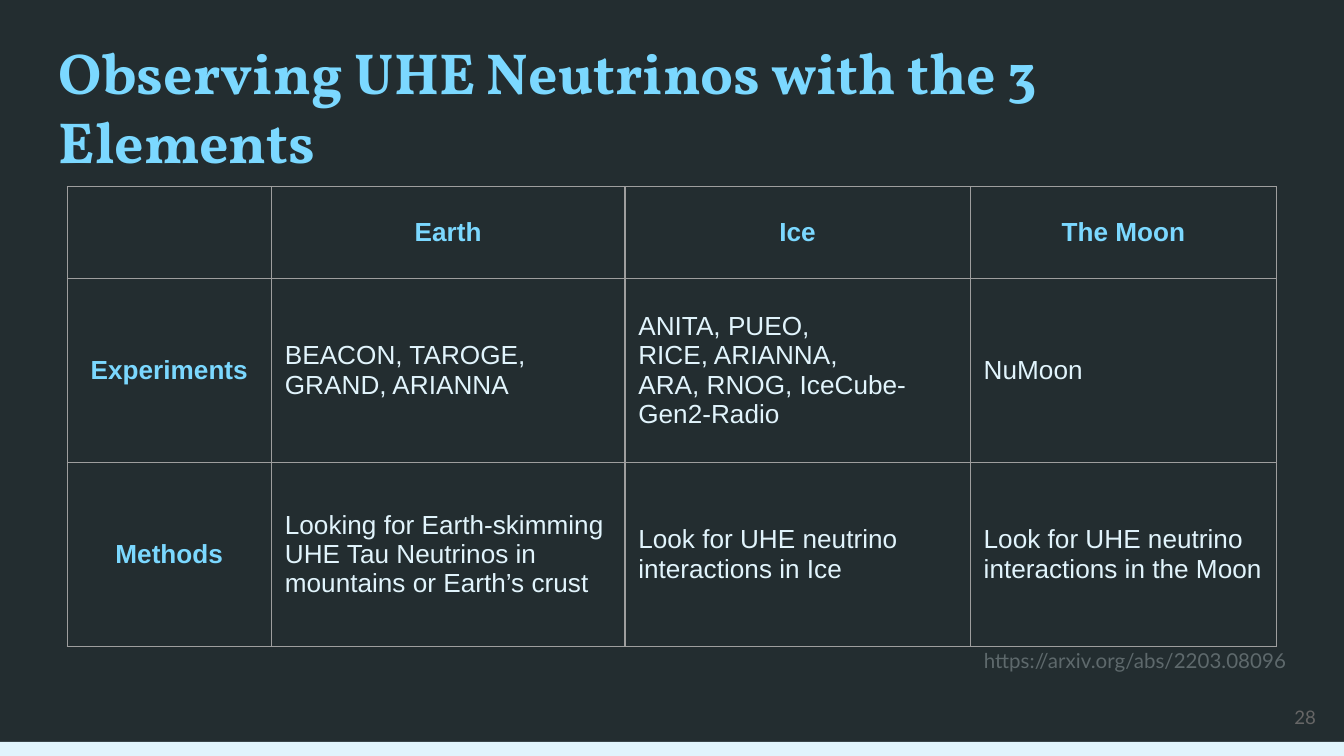
from dataclasses import dataclass

from lxml.etree import SubElement
from pptx import Presentation
from pptx.dml.color import RGBColor
from pptx.enum.shapes import MSO_SHAPE
from pptx.enum.text import MSO_ANCHOR, PP_ALIGN
from pptx.oxml.ns import qn
from pptx.util import Inches, Pt

# A 16:9 slide; boxes are placed in hundredths of an inch
WIDTH = 10
HEIGHT = WIDTH * 9 / 16


@dataclass(frozen=True)
class Theme:
    background: str = "232D30"
    accent: str = "7BD8FF"
    body: str = "E1F4FC"
    source: str = "5E696C"
    number: str = "666666"
    border: str = "9E9E9E"
    border_width: float = 0.75
    inset: float = 0.1
    title_size: int = 31
    table_size: int = 14
    source_size: int = 11
    number_size: int = 10
    title_font: str = "Vollkorn"
    table_font: str = "Arial"
    small_font: str = "Lato"


THEME = Theme()

COLUMNS = (1.52, 2.63, 2.57, 2.28)
ROWS = (0.68, 1.37, 1.37)
CONTENT = (
    ("", "Earth", "Ice", "The Moon"),
    ("Experiments", "BEACON, TAROGE, GRAND, ARIANNA",
     "ANITA, PUEO,\nRICE, ARIANNA,\nARA, RNOG, IceCube-Gen2-Radio", "NuMoon"),
    ("Methods",
     "Looking for Earth-skimming UHE Tau Neutrinos in mountains or Earth’s crust",
     "Look for UHE neutrino interactions in Ice",
     "Look for UHE neutrino interactions in the Moon"),
)


def inch_box(*sides):
    """Turn left, top, width and height into lengths."""
    return tuple(Inches(side) for side in sides)


def set_insets(holder):
    """Give a text frame or a table cell the same margin on every side."""
    holder.margin_left = holder.margin_right = Inches(THEME.inset)
    holder.margin_top = holder.margin_bottom = Inches(THEME.inset)


def write_text(frame, text, *, size, font, color, bold=False, align=PP_ALIGN.LEFT):
    """Write one paragraph for each line of text."""
    for index, line in enumerate(text.split("\n")):
        paragraph = frame.add_paragraph() if index else frame.paragraphs[0]
        paragraph.alignment = align
        if not line:
            continue
        run = paragraph.add_run()
        run.text = line
        run.font.size = Pt(size)
        run.font.name = font
        run.font.bold = bold
        run.font.color.rgb = RGBColor.from_string(color)


def add_label(slide, box, text, *, anchor=MSO_ANCHOR.TOP, **text_format):
    frame = slide.shapes.add_textbox(*box).text_frame
    frame.word_wrap = True
    frame.vertical_anchor = anchor
    set_insets(frame)
    write_text(frame, text, **text_format)


def outline_cell(cell):
    """Draw the four borders, which come before the fill in the cell."""
    properties = cell._tc.get_or_add_tcPr()
    for side in ("a:lnL", "a:lnR", "a:lnT", "a:lnB"):
        line = SubElement(properties, qn(side), w=str(Pt(THEME.border_width)))
        fill = SubElement(line, qn("a:solidFill"))
        SubElement(fill, qn("a:srgbClr"), val=THEME.border)


def add_backdrop(slide, strip_box):
    fill = slide.background.fill
    fill.solid()
    fill.fore_color.rgb = RGBColor.from_string(THEME.background)
    strip = slide.shapes.add_shape(MSO_SHAPE.RECTANGLE, *strip_box)
    strip.shadow.inherit = False
    strip.fill.solid()
    strip.fill.fore_color.rgb = RGBColor.from_string(THEME.body)
    strip.line.fill.background()


def add_comparison(slide, box):
    width, height = box[2:]
    table = slide.shapes.add_table(len(ROWS), len(COLUMNS), *box).table
    table.first_row = table.horz_banding = False
    for column, part in zip(table.columns, COLUMNS):
        column.width = int(width * part / sum(COLUMNS))
    for row, part in zip(table.rows, ROWS):
        row.height = int(height * part / sum(ROWS))

    for r, texts in enumerate(CONTENT):
        for c, text in enumerate(texts):
            cell = table.cell(r, c)
            cell.vertical_anchor = MSO_ANCHOR.MIDDLE
            set_insets(cell)
            outline_cell(cell)
            cell.fill.background()
            heading = r == 0 or c == 0
            write_text(cell.text_frame, text, size=THEME.table_size,
                       font=THEME.table_font, bold=heading,
                       color=THEME.accent if heading else THEME.body,
                       align=PP_ALIGN.CENTER if heading else PP_ALIGN.LEFT)


def build_slide(deck):
    slide = deck.slides.add_slide(deck.slide_layouts[6])
    # Background and bottom strip
    add_backdrop(slide, inch_box(0, 5.52, WIDTH, HEIGHT - 5.52))
    # Comparison table
    add_comparison(slide, inch_box(0.5, 1.39, sum(COLUMNS), sum(ROWS)))
    # Slide number
    add_label(slide, inch_box(9.29, 5.12, 0.6, 0.43), "28",
              anchor=MSO_ANCHOR.MIDDLE, size=THEME.number_size,
              font=THEME.small_font, color=THEME.number, align=PP_ALIGN.RIGHT)
    # Title
    add_label(slide, inch_box(0.34, 0.17, 9.32, 0.68),
              "Observing UHE Neutrinos with the 3 Elements",
              size=THEME.title_size, font=THEME.title_font,
              color=THEME.accent, bold=True)
    # Source
    add_label(slide, inch_box(7.07, 4.73, 2.6, 0.39),
              "https://arxiv.org/abs/2203.08096", size=THEME.source_size,
              font=THEME.small_font, color=THEME.source, align=PP_ALIGN.RIGHT)


def main():
    deck = Presentation()
    deck.slide_width, deck.slide_height = Inches(WIDTH), Inches(HEIGHT)
    build_slide(deck)
    deck.save("out.pptx")


if __name__ == "__main__":
    main()
